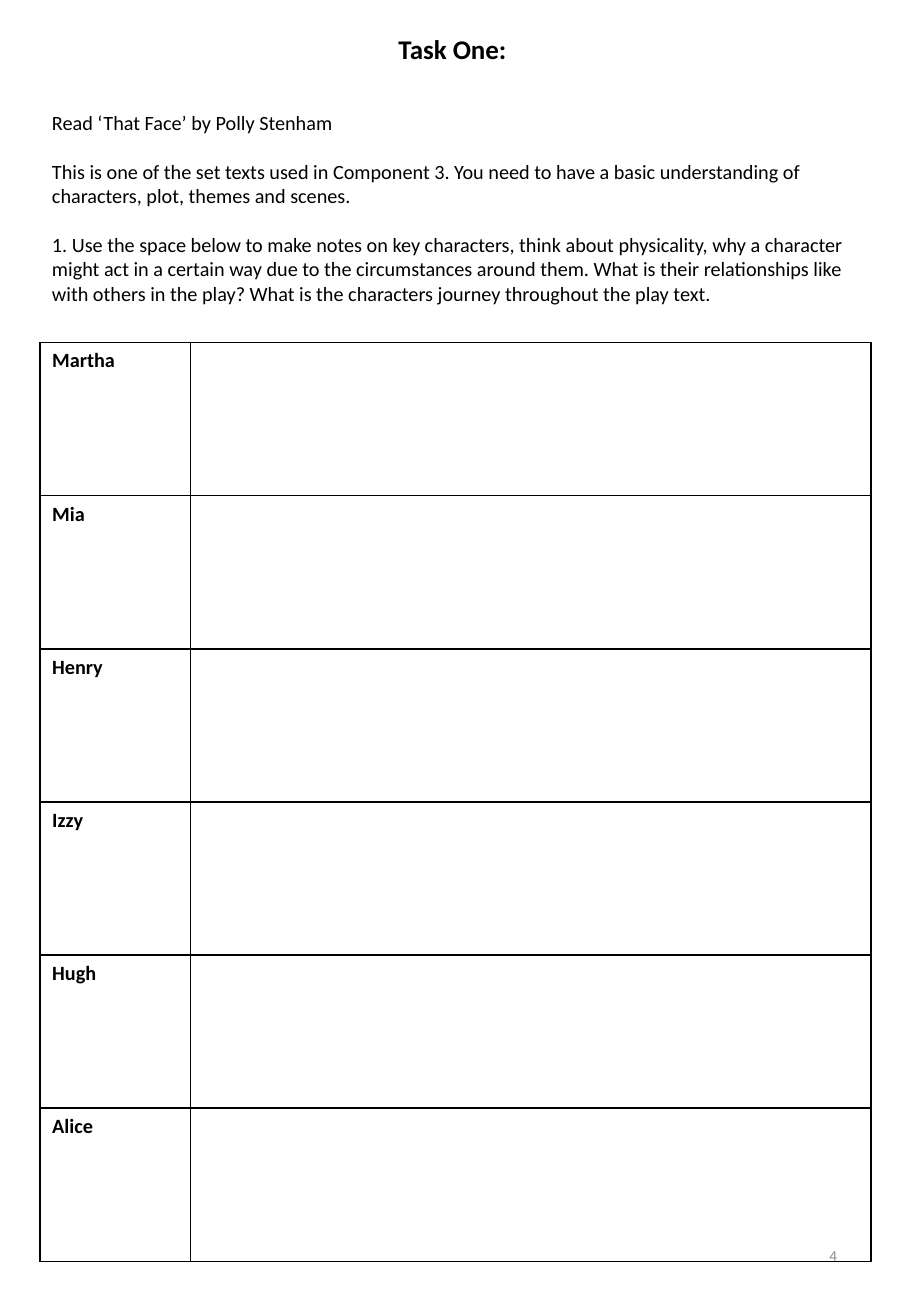
import pptx
import pptx.util
import pptx.dml.color
import pptx.enum.text
import pptx.oxml
import pptx.oxml.ns

WIDE, HIGH = 7.5, 10.83
EDGE, SPAN = 0.33, 6.84
COLORS = {"ink": "000000", "gray": "8C8C8C"}
NAMES = ["Martha", "Mia", "Henry", "Izzy", "Hugh", "Alice"]
BRIEF = [
    "Read ‘That Face’ by Polly Stenham",
    "This is one of the set texts used in Component 3. You need to have a basic "
    "understanding of characters, plot, themes and scenes.",
    "1. Use the space below to make notes on key characters, think about physicality, "
    "why a character might act in a certain way due to the circumstances around them. "
    "What is their relationships like with others in the play? What is the characters "
    "journey throughout the play text.",
]
ALIGN = pptx.enum.text.PP_ALIGN
ANCHOR = pptx.enum.text.MSO_ANCHOR


def inches(box):
    """Turn a box in inches into slide lengths."""
    return [pptx.util.Inches(side) for side in box]


def style(frame, size, color="ink", bold=False, align=ALIGN.LEFT, anchor=ANCHOR.TOP):
    """Format all the text in a frame."""
    frame.word_wrap = True
    frame.vertical_anchor = anchor
    for line in frame.paragraphs:
        line.alignment = align
        for run in line.runs:
            run.font.name = "Calibri"
            run.font.size = pptx.util.Pt(size)
            run.font.bold = bold
            run.font.color.rgb = pptx.dml.color.RGBColor.from_string(COLORS[color])


def add_title(slide, box):
    """Set the heading in the title placeholder."""
    title = slide.shapes.title
    title.left, title.top, title.width, title.height = inches(box)
    title.text_frame.text = "Task One: "
    title.text_frame.auto_size = pptx.enum.text.MSO_AUTO_SIZE.NONE
    style(title.text_frame, 16, bold=True, align=ALIGN.CENTER)


def add_brief(slide, box):
    """Write the task as spaced paragraphs."""
    frame = slide.shapes.add_textbox(*inches(box)).text_frame
    frame.text = "\n".join(BRIEF)
    style(frame, 12)
    for line in frame.paragraphs[:-1]:
        line.space_after = pptx.util.Pt(14.5)


def add_number(slide, box):
    """Put the page number at the lower right."""
    frame = slide.shapes.add_textbox(*inches(box)).text_frame
    frame.text = "4"
    style(frame, 9, "gray", align=ALIGN.RIGHT, anchor=ANCHOR.MIDDLE)


def add_border(cell):
    """Draw a one-point line on each side of a cell."""
    props = cell._tc.get_or_add_tcPr()
    for spot, side in enumerate(["lnL", "lnR", "lnT", "lnB"]):
        line = pptx.oxml.parse_xml(
            f'<a:{side} {pptx.oxml.ns.nsdecls("a")} w="{pptx.util.Pt(1)}"><a:solidFill>'
            f'<a:srgbClr val="{COLORS["ink"]}"/></a:solidFill></a:{side}>')
        props.insert(spot, line)


def add_notes(slide, box):
    """Build the table with one row for each character."""
    left, top, width, height = inches(box)
    table = slide.shapes.add_table(len(NAMES), 2, left, top, width, height).table
    table.first_row = table.horz_banding = False
    table.columns[0].width = pptx.util.Inches(1.24)
    table.columns[1].width = width - table.columns[0].width
    for row, name in zip(table.rows, NAMES):
        row.height = height // len(NAMES)
        row.cells[0].text_frame.text = name
        style(row.cells[0].text_frame, 12, bold=True)
        for cell in row.cells:
            cell.fill.background()
            add_border(cell)


def main():
    """Build the worksheet page."""
    deck = pptx.Presentation()
    deck.slide_width, deck.slide_height = inches([WIDE, HIGH])
    slide = deck.slides.add_slide(deck.slide_layouts[5])
    add_number(slide, [5.3, 10.04, 1.69, 0.58])
    add_title(slide, [2.04, 0.22, 3.42, 0.37])
    add_brief(slide, [EDGE, 0.86, SPAN, 2.42])
    add_notes(slide, [EDGE, 2.82, SPAN, 7.56])
    deck.save("out.pptx")


if __name__ == "__main__":
    main()
